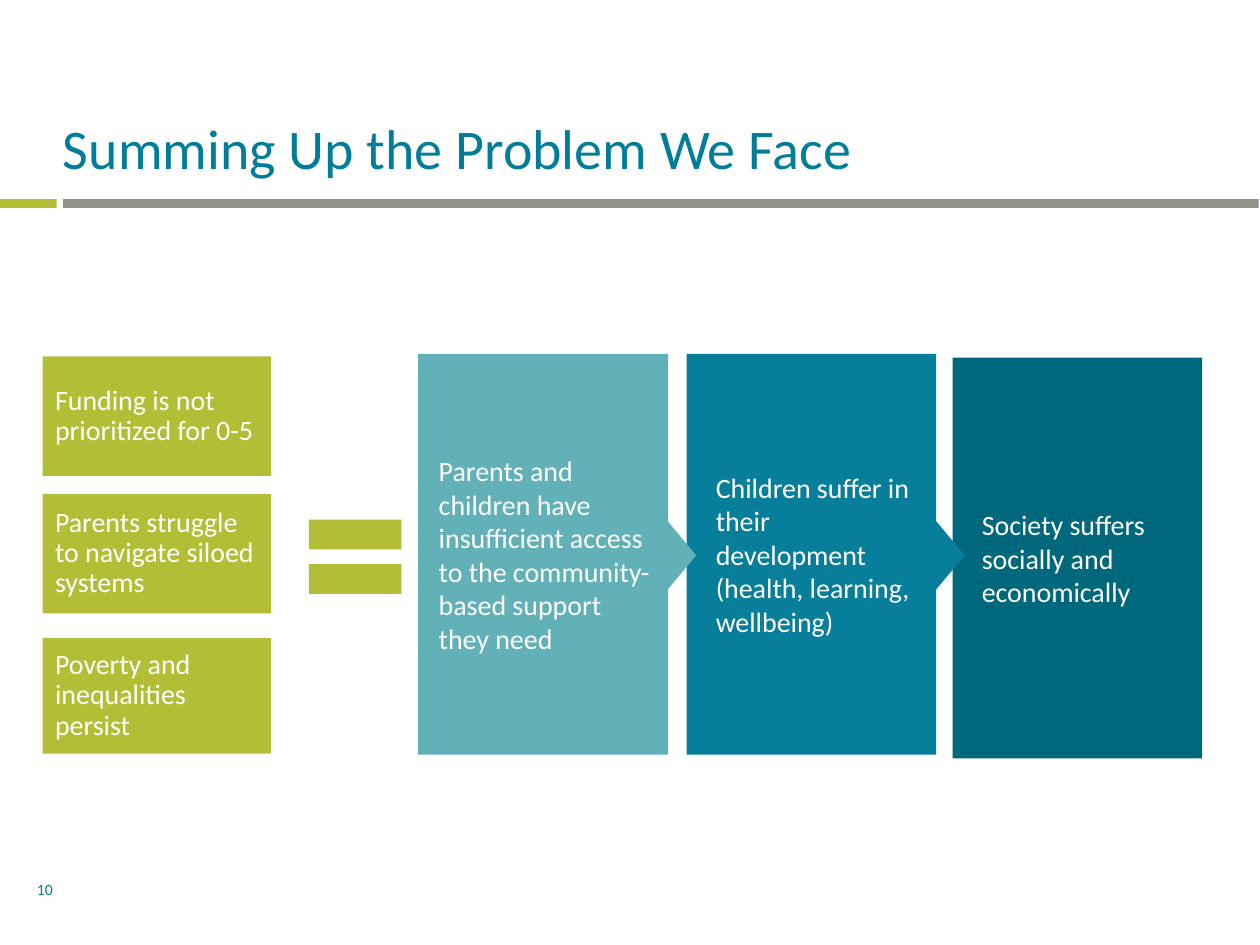
import pptx
import pptx.dml.color
import pptx.enum.shapes
import pptx.enum.text
import pptx.util

Pt = pptx.util.Pt
RGBColor = pptx.dml.color.RGBColor
MSO_SHAPE = pptx.enum.shapes.MSO_SHAPE
ANCHOR = pptx.enum.text.MSO_ANCHOR
ALIGN = pptx.enum.text.PP_ALIGN

LIME = RGBColor(0xB1, 0xBE, 0x36)
GRAY = RGBColor(0x92, 0x92, 0x88)
TITLE_TEAL = RGBColor(0x00, 0x7D, 0x99)
LIGHT_TEAL = RGBColor(0x62, 0xB0, 0xB8)
MID_TEAL = RGBColor(0x07, 0x7E, 0x9A)
DARK_TEAL = RGBColor(0x00, 0x68, 0x7C)
WHITE = RGBColor(0xFF, 0xFF, 0xFF)

deck = pptx.Presentation()
deck.slide_width, deck.slide_height = Pt(720), Pt(540)
slide = deck.slides.add_slide(deck.slide_layouts[6])


def add_block(kind, left, top, width, height, color):
    block = slide.shapes.add_shape(kind, Pt(left), Pt(top), Pt(width), Pt(height))
    block.shadow.inherit = False
    block.fill.solid()
    block.fill.fore_color.rgb = color
    block.line.fill.background()
    return block


def write(shape, text, size, color, anchor=ANCHOR.MIDDLE, align=ALIGN.LEFT, spacing=1.0):
    frame = shape.text_frame
    frame.word_wrap = True
    frame.vertical_anchor = anchor
    paragraph = frame.paragraphs[0]
    paragraph.text = text
    paragraph.alignment = align
    paragraph.line_spacing = spacing
    paragraph.font.name = "Calibri"
    paragraph.font.size = Pt(size)
    paragraph.font.color.rgb = color
    return frame


# Divider, page number and title
add_block(MSO_SHAPE.RECTANGLE, 36, 113.8, 683.3, 5, GRAY)
add_block(MSO_SHAPE.RECTANGLE, 0, 113.8, 32.4, 5, LIME)

page_number = slide.shapes.add_textbox(Pt(20.2), Pt(501.1), Pt(10.8), Pt(13.7))
title = slide.shapes.add_textbox(Pt(36), Pt(25.9), Pt(648), Pt(77.8))
for frame in (
    write(page_number, "10", 9, TITLE_TEAL, align=ALIGN.CENTER),
    write(title, "Summing Up the Problem We Face", 32, TITLE_TEAL, ANCHOR.BOTTOM, spacing=0.9),
):
    frame.margin_left = frame.margin_right = frame.margin_top = frame.margin_bottom = 0

# Causes
causes = [
    ("Funding is not prioritized for 0-5", 203.6, 68.4),
    ("Parents struggle to navigate siloed systems", 282.2, 68.4),
    ("Poverty and inequalities persist", 364.5, 66.2),
]
for text, top, height in causes:
    cause = add_block(MSO_SHAPE.RECTANGLE, 24.4, top, 130.4, height, LIME)
    write(cause, text, 16, WHITE, spacing=0.9)

add_block(MSO_SHAPE.MATH_EQUAL, 167, 282.2, 72, 72, LIME)

# Consequences, last one first so that each arrow lies over the next panel
PANEL_WIDTH, PANEL_HEIGHT = 142.6, 229
ARROW_BASE, ARROW_DEPTH = 61.9, 25.9
consequences = [
    ("Society suffers socially and economically", 544.4, 204.4, 16.6, DARK_TEAL, False),
    ("Children suffer in their development (health, learning, wellbeing)",
     392.4, 202.2, 16.6, MID_TEAL, True),
    ("Parents and children have insufficient access to the community-based support they need",
     239, 202.2, 11.7, LIGHT_TEAL, True),
]
for text, left, top, inset, color, leads_on in consequences:
    if leads_on:
        arrow_left = left + PANEL_WIDTH + 3.3 - ARROW_BASE / 2
        arrow = add_block(MSO_SHAPE.ISOSCELES_TRIANGLE, arrow_left, 304.4,
                          ARROW_BASE, ARROW_DEPTH, color)
        arrow.rotation = 90
    panel = add_block(MSO_SHAPE.RECTANGLE, left, top, PANEL_WIDTH, PANEL_HEIGHT, color)
    write(panel, text, 16, WHITE).margin_left = Pt(inset)

deck.save("out.pptx")
